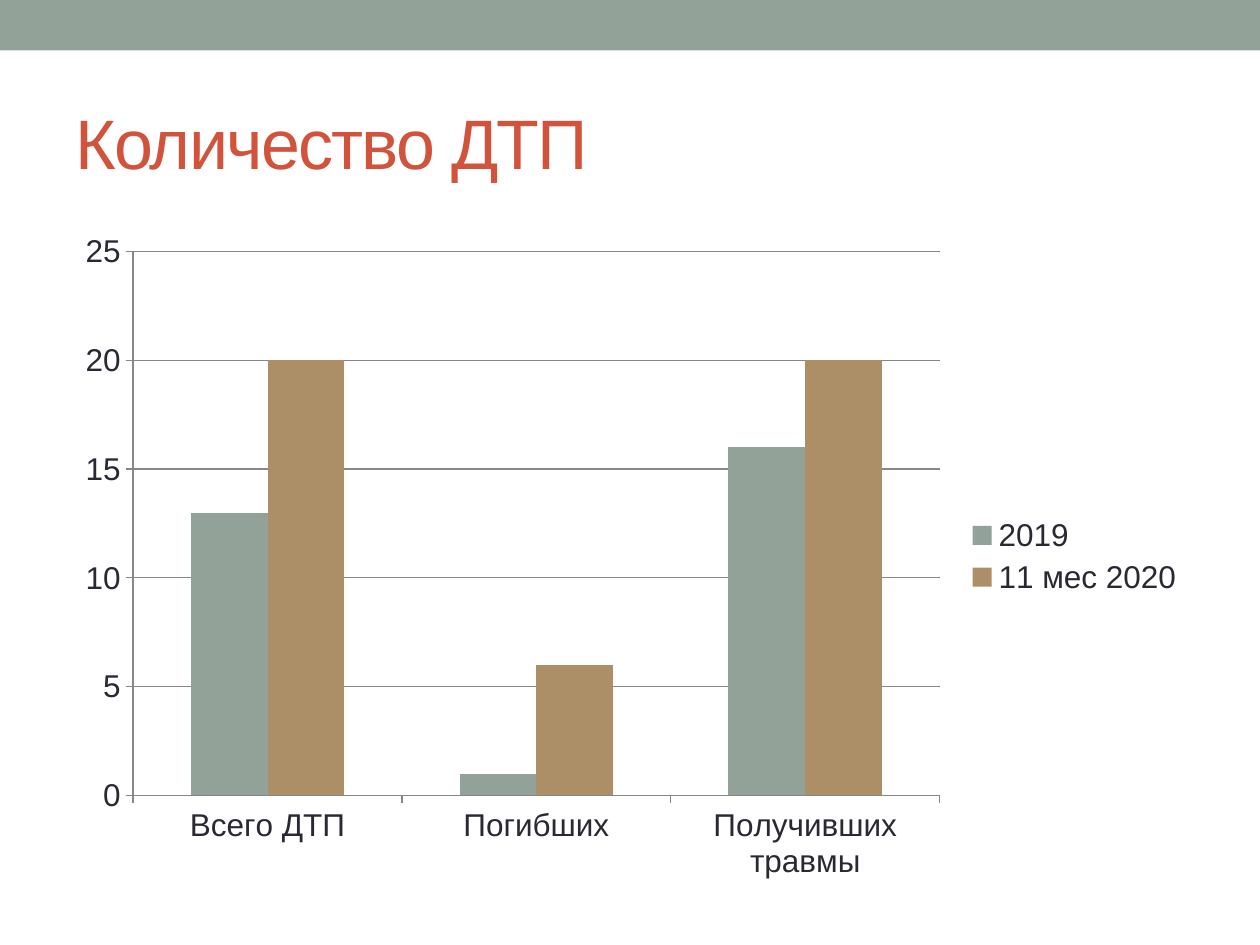
from pptx import Presentation
from pptx import util as u
from pptx.chart import data as cd
from pptx.dml import color as dc
from pptx.enum import chart as ec, shapes, text

HUES = {"sage": "93A299", "tan": "AD8F67", "red": "D2533C",
        "ink": "292934", "grid": "878787"}
FACE = "Arial"


def rgb(name):
    return dc.RGBColor.from_string(HUES[name])


def inch(box):
    return [u.Inches(v) for v in box]


def write(slide, box, words, size=18, hue="ink", gap=0):
    """Place one line of text; gap is the letter spacing in points."""
    frame = slide.shapes.add_textbox(*inch(box)).text_frame
    frame.word_wrap = True
    frame.vertical_anchor = text.MSO_ANCHOR.MIDDLE
    run = frame.paragraphs[0].add_run()
    run.text = words
    font = run.font
    font.name, font.size = FACE, u.Pt(size)
    font.color.rgb = rgb(hue)
    font._element.set("spc", str(gap * 100))


def band(slide, box):
    bar = slide.shapes.add_shape(shapes.MSO_SHAPE.RECTANGLE, *inch(box))
    bar.shadow.inherit = False
    bar.fill.solid()
    bar.fill.fore_color.rgb = rgb("sage")
    bar.line.fill.background()


def rule(line):
    line.color.rgb = rgb("grid")
    line.width = u.Pt(0.75)


def graph(slide, box, cats, rows):
    data = cd.CategoryChartData()
    data.categories = cats
    for name, vals, _ in rows:
        data.add_series(name, vals)
    chart = slide.shapes.add_chart(
        ec.XL_CHART_TYPE.COLUMN_CLUSTERED, *inch(box), data).chart
    chart.has_title = False
    chart.font.name, chart.font.size = FACE, u.Pt(18)
    chart.font.color.rgb = rgb("ink")

    # Columns
    plot = chart.plots[0]
    plot.gap_width, plot.overlap = 150, 0
    plot.vary_by_categories = False
    for bars, (_, _, hue) in zip(plot.series, rows):
        bars.format.fill.solid()
        bars.format.fill.fore_color.rgb = rgb(hue)

    # Axes
    for axis in (chart.category_axis, chart.value_axis):
        axis.major_tick_mark = ec.XL_TICK_MARK.OUTSIDE
        axis.minor_tick_mark = ec.XL_TICK_MARK.NONE
        rule(axis.format.line)
    side = chart.value_axis
    side.minimum_scale, side.maximum_scale, side.major_unit = 0, 25, 5
    side.has_major_gridlines = True
    rule(side.major_gridlines.format.line)

    # Legend
    chart.has_legend = True
    chart.legend.position = ec.XL_LEGEND_POSITION.RIGHT
    chart.legend.include_in_layout = False


def main():
    deck = Presentation()
    deck.slide_width, deck.slide_height = u.Inches(10), u.Inches(7.5)
    slide = deck.slides.add_slide(deck.slide_layouts[6])
    band(slide, (0, 0, 10, 0.4))
    write(slide, (0.5, 0.58, 9, 1.08), "Количество ДТП",
          size=40, hue="red", gap=-1)
    graph(slide, (0.5, 1.75, 9, 5.33),
          ("Всего ДТП", "Погибших", "Получивших травмы"),
          (("2019", (13, 1, 16), "sage"),
           ("11 мес 2020", (20, 6, 20), "tan")))
    deck.save("out.pptx")


if __name__ == "__main__":
    main()
